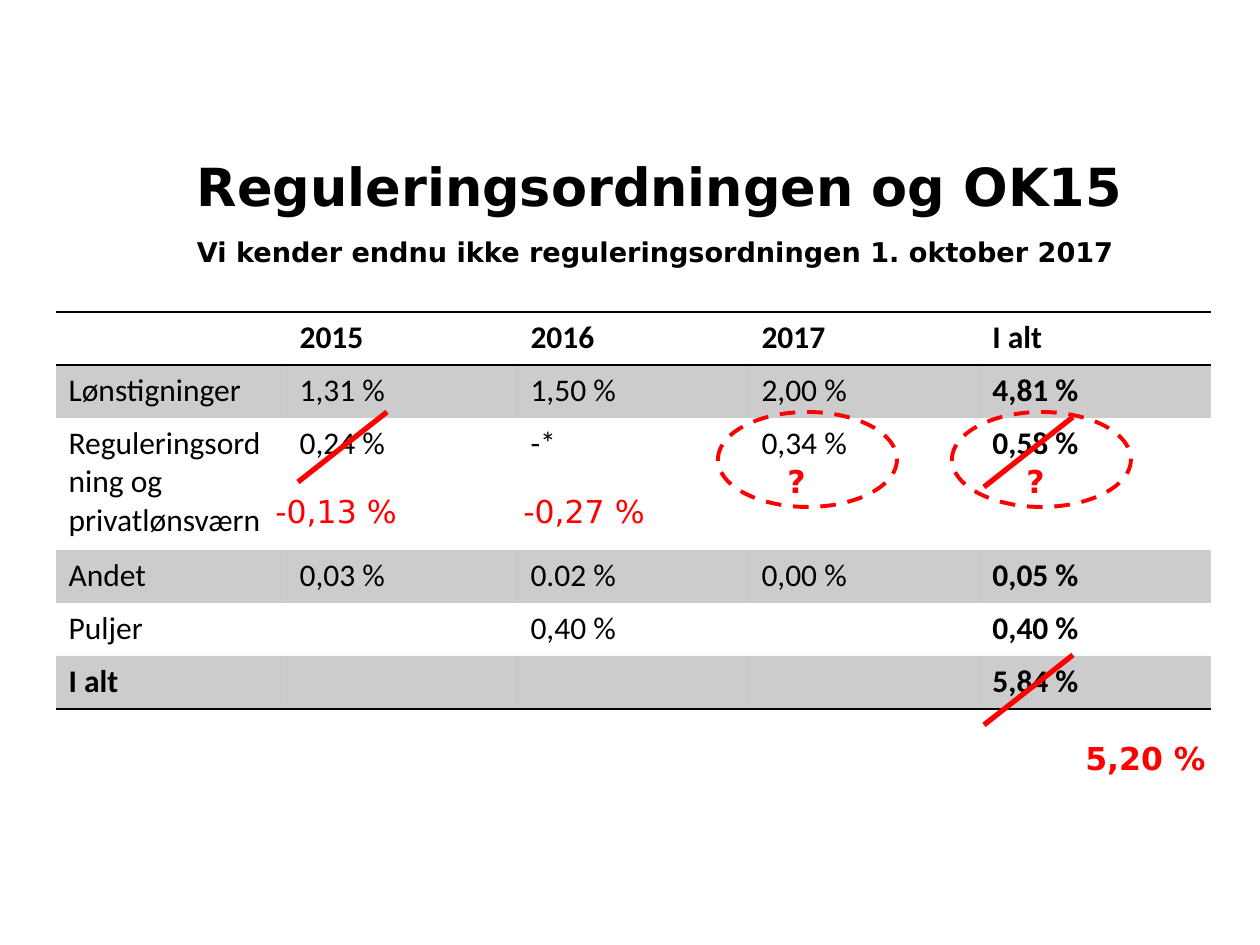
import pptx
import pptx.dml.color
import pptx.enum.dml
import pptx.enum.shapes
import pptx.oxml
import pptx.oxml.ns
import pptx.util

PX = 914400 // 126
COLORS = {"ink": "000000", "mark": "FF0000"}
HEADING_FONT, TABLE_FONT = "DejaVu Sans", "Calibri"
NO_STYLE = "{2D5ABB26-0587-4C30-8999-92F81FD0307C}"

ROWS = [
    ["", "2015", "2016", "2017", "I alt"],
    ["Lønstigninger", "1,31 %", "1,50 %", "2,00 %", "4,81 %"],
    ["Reguleringsordning og privatlønsværn", "0,24 %", "-*", "0,34 %", "0,58 %"],
    ["Andet", "0,03 %", "0.02 %", "0,00 %", "0,05 %"],
    ["Puljer", "", "0,40 %", "", "0,40 %"],
    ["I alt", "", "", "", "5,84 %"],
]
ROW_HEIGHTS = [53, 53, 132, 53, 53, 53]
COLUMN_WIDTH = 231


def emu(*lengths):
    return [n * PX for n in lengths]


def rgb(name):
    return pptx.dml.color.RGBColor.from_string(COLORS[name])


def write(tf, text, size=18, font=HEADING_FONT, color="ink", bold=False, spacing=None):
    p = tf.paragraphs[0]
    p.line_spacing = spacing
    if not text:
        p.font.size = pptx.util.Pt(size)
        return
    r = p.add_run()
    r.text = text
    r.font.size = pptx.util.Pt(size)
    r.font.name = font
    r.font.bold = bold
    r.font.color.rgb = rgb(color)


def add_borders(cell, sides):
    """Draw 1 pt lines on the given sides, in the order T, B."""
    tcPr = cell._tc.get_or_add_tcPr()
    for i, side in enumerate(sides):
        tcPr.insert(i, pptx.oxml.parse_xml(
            f'<a:ln{side} {pptx.oxml.ns.nsdecls("a")} w="12700"><a:solidFill>'
            f'<a:srgbClr val="{COLORS["ink"]}"/></a:solidFill></a:ln{side}>'))


def shade(cell):
    """Fill with 20 % opaque ink."""
    cell.fill.solid()
    cell.fill.fore_color.rgb = rgb("ink")
    clr = cell._tc.tcPr.find(".//" + pptx.oxml.ns.qn("a:srgbClr"))
    clr.append(pptx.oxml.parse_xml(
        f'<a:alpha {pptx.oxml.ns.nsdecls("a")} val="20000"/>'))


class Deck:
    def __init__(self, width, height):
        self.prs = pptx.Presentation()
        self.prs.slide_width, self.prs.slide_height = emu(width, height)
        self.s = self.prs.slides.add_slide(self.prs.slide_layouts[6])

    def text(self, x, y, w, h, text, inset=True, **fmt):
        tf = self.s.shapes.add_textbox(*emu(x, y, w, h)).text_frame
        tf.word_wrap = True
        if not inset:
            tf.margin_left = tf.margin_right = tf.margin_top = tf.margin_bottom = 0
        write(tf, text, **fmt)

    def table(self, x, y, rows, column_width, row_heights):
        last = len(rows) - 1
        columns = len(rows[0])
        frame = self.s.shapes.add_table(
            len(rows), columns,
            *emu(x, y, column_width * columns, sum(row_heights)))
        table = frame.table
        table.first_row = table.horz_banding = False
        table._tbl.tblPr.find(pptx.oxml.ns.qn("a:tableStyleId")).text = NO_STYLE
        for column in table.columns:
            column.width = column_width * PX
        for i, values in enumerate(rows):
            table.rows[i].height = row_heights[i] * PX
            for j, value in enumerate(values):
                cell = table.cell(i, j)
                bold = i in (0, last) or j == columns - 1
                write(cell.text_frame, value, font=TABLE_FONT, bold=bold)
                if i % 2:
                    shade(cell)
                else:
                    cell.fill.background()
                add_borders(cell, {0: "TB", last: "B"}.get(i, ""))

    def strike(self, x, y, w, h):
        """Draw a stroke rising from lower left to upper right."""
        line = self.s.shapes.add_connector(
            pptx.enum.shapes.MSO_CONNECTOR.STRAIGHT, *emu(x, y + h, x + w, y))
        line.line.color.rgb = rgb("mark")
        line.line.width = pptx.util.Pt(3)
        line._element.spPr.append(pptx.oxml.parse_xml(
            f'<a:effectLst {pptx.oxml.ns.nsdecls("a")}/>'))

    def ring(self, x, y, w, h):
        sp = self.s.shapes.add_shape(
            pptx.enum.shapes.MSO_SHAPE.OVAL, *emu(x, y, w, h))
        sp.shadow.inherit = False
        sp.fill.background()
        sp.line.color.rgb = rgb("mark")
        sp.line.width = pptx.util.Pt(2.25)
        sp.line.dash_style = pptx.enum.dml.MSO_LINE.DASH


def main():
    deck = Deck(1260, 945)
    deck.text(197, 244, 975, 48,
              "Vi kender endnu ikke reguleringsordningen 1. oktober 2017",
              inset=False, size=15.5, bold=True, spacing=0.7)
    deck.text(197, 161, 976, 54, "Reguleringsordningen og OK15",
              inset=False, size=30, bold=True, spacing=0.9)
    deck.table(56, 312, ROWS, COLUMN_WIDTH, ROW_HEIGHTS)
    for x, y in [(298, 412), (984, 417), (984, 655)]:
        deck.strike(x, y, 89, 70)
    for x, y, note, bold in [
        (263, 486, "-0,13 %", False),
        (511, 486, "-0,27 %", False),
        (1073, 733, "5,20 %", True),
        (775, 456, "?", True),
        (1014, 456, "?", True),
    ]:
        deck.text(x, y, 174, 50, note, color="mark", bold=bold)
    for x in (718, 952):
        deck.ring(x, 412, 179, 95)
    deck.prs.save("out.pptx")


if __name__ == "__main__":
    main()
